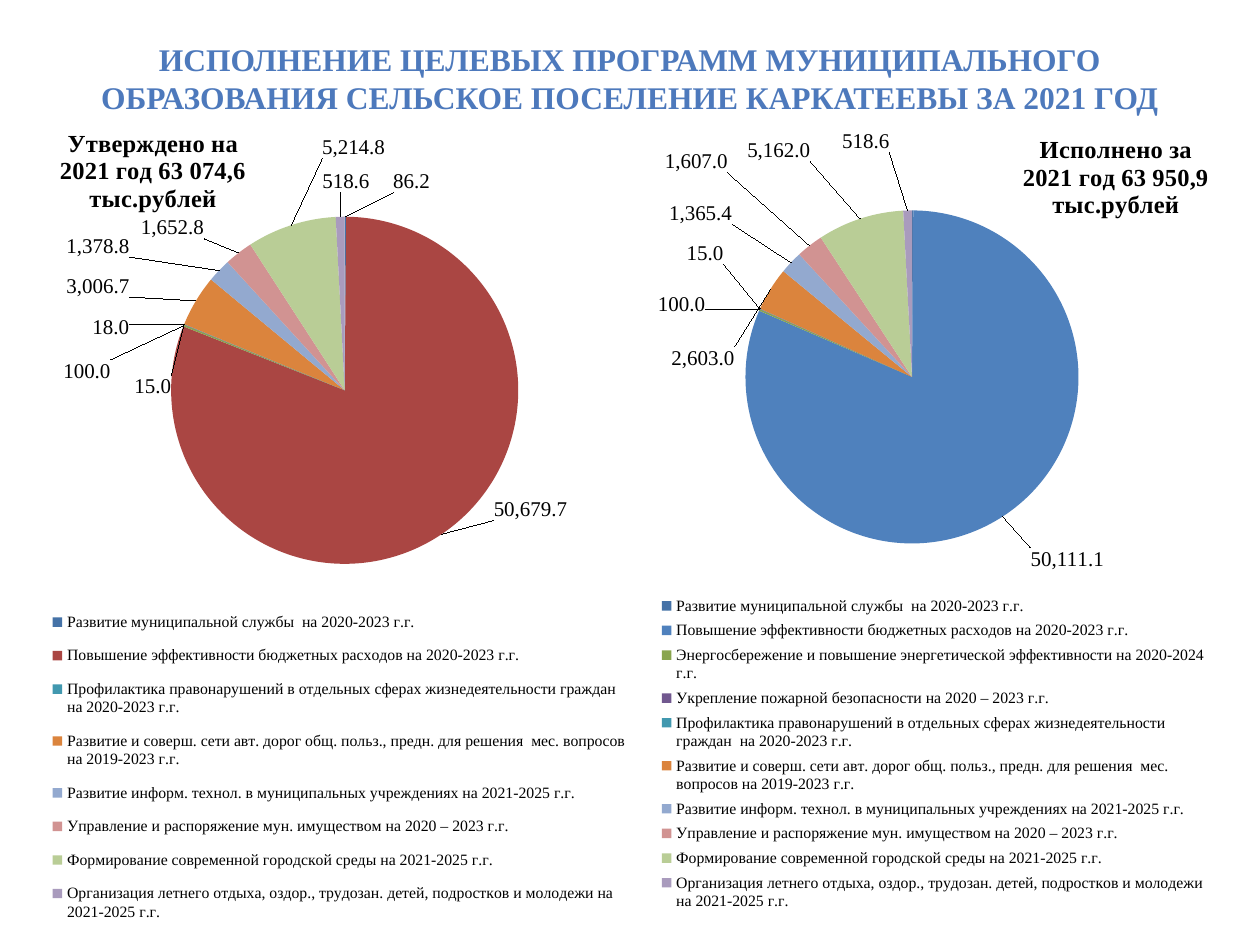
from lxml.etree import SubElement
from pptx import Presentation
from pptx.chart.data import CategoryChartData
from pptx.dml.color import RGBColor
from pptx.enum.chart import XL_CHART_TYPE, XL_LABEL_POSITION, XL_LEGEND_POSITION
from pptx.enum.text import MSO_ANCHOR, MSO_AUTO_SIZE, PP_ALIGN
from pptx.oxml import parse_xml
from pptx.oxml.ns import nsdecls, qn
from pptx.util import Cm, Pt

FONT = "Times New Roman"
FORMAT = "#,##0.0"
BLUE = RGBColor(0x4D, 0x79, 0xBC)
BLACK = RGBColor(0, 0, 0)
SKY = RGBColor(0x4F, 0x81, 0xBD)
RED = RGBColor(0xAA, 0x46, 0x43)
SHADES = [
    RGBColor(0x45, 0x72, 0xA7), RED,
    RGBColor(0x89, 0xA5, 0x4E), RGBColor(0x71, 0x58, 0x8F),
    RGBColor(0x41, 0x98, 0xAF), RGBColor(0xDB, 0x84, 0x3D),
    RGBColor(0x93, 0xA9, 0xCF), RGBColor(0xD1, 0x93, 0x92),
    RGBColor(0xB9, 0xCD, 0x96), RGBColor(0xA9, 0x9B, 0xBD),
]
NAMES = [
    "Развитие муниципальной службы  на 2020-2023 г.г.",
    "Повышение эффективности бюджетных расходов на 2020-2023 г.г.",
    "Энергосбережение и повышение энергетической эффективности на 2020-2024 г.г.",
    "Укрепление пожарной безопасности на 2020 – 2023 г.г.",
    "Профилактика правонарушений в отдельных сферах жизнедеятельности граждан  на 2020-2023 г.г.",
    "Развитие и соверш. сети авт. дорог общ. польз., предн. для решения  мес. вопросов на 2019-2023 г.г.",
    "Развитие информ. технол. в муниципальных учреждениях на 2021-2025 г.г.",
    "Управление и распоряжение мун. имуществом на 2020 – 2023 г.г.",
    "Формирование современной городской среды на 2021-2025 г.г.",
    "Организация летнего отдыха, оздор., трудозан. детей, подростков и молодежи на 2021-2025 г.г.",
]
# Boxes inside a chart are shares of its size; shifts move labels off the rim.
PIES = [
    {
        "title": "Утверждено на\n2021 год 63 074,6\nтыс.рублей",
        "frame": (0.89, 1.98, 12.12, 17.07),
        "vals": [86.2, 50679.7, 100, 18, 15, 3006.7, 1378.8, 1652.8, 5214.8, 518.6],
        "big": RED,
        "head": (0.02, 0.03),
        "plot": (0.2, 0.14, 0.6, 0.41),
        "key": (0.01, 0.59, 0.96, 0.4),
        "hide": [2, 3],
        "shifts": [(0.11, -0.02), (0.08, -0.05), (-0.11, 0.07), (-0.08, 0.02),
                   (-0.01, 0.09), (-0.1, 0), (-0.14, -0.01), (-0.05, -0.01),
                   (0.16, -0.07), (0.01, -0.02)],
    },
    {
        "title": "Исполнено за\n2021 год 63 950,9\nтыс.рублей",
        "frame": (12.75, 1.78, 11.99, 16.87),
        "vals": [78.8, 50111.1, 100, 18, 15, 2603, 1365.4, 1607, 5162, 518.6],
        "big": SKY,
        "head": (0.65, 0.05),
        "plot": (0.19, 0.14, 0.56, 0.41),
        "key": (0.04, 0.6, 0.93, 0.39),
        "hide": [],
        "shifts": [None, (0.04, 0.03), (-0.08, 0.01), None,
                   (-0.05, -0.05), (-0.05, 0.1), (-0.09, -0.04), (-0.13, -0.08),
                   (-0.08, -0.06), (-0.07, -0.06)],
    },
]


def place(node, spot, box, mode="edge"):
    """Give a chart part a manual layout as child number spot."""
    for old in node.findall(qn("c:layout")):
        node.remove(old)
    lay = parse_xml(f"<c:layout {nsdecls('c')}><c:manualLayout/></c:layout>")
    if node.tag == qn("c:plotArea"):
        SubElement(lay[0], qn("c:layoutTarget")).set("val", "inner")
    if mode:
        for tag in ("xMode", "yMode"):
            SubElement(lay[0], qn("c:" + tag)).set("val", mode)
    for tag, val in zip("xywh", box):
        SubElement(lay[0], qn("c:" + tag)).set("val", str(val))
    node.insert(spot, lay)


deck = Presentation()
deck.slide_width, deck.slide_height = Cm(25.4), Cm(19.05)
slide = deck.slides.add_slide(deck.slide_layouts[5])

title = slide.shapes.title
title.left, title.top, title.width, title.height = Cm(1.27), Cm(0.76), Cm(22.86), Cm(2.16)
frame = title.text_frame
frame.text = ("ИСПОЛНЕНИЕ ЦЕЛЕВЫХ ПРОГРАММ МУНИЦИПАЛЬНОГО ОБРАЗОВАНИЯ "
              "СЕЛЬСКОЕ ПОСЕЛЕНИЕ КАРКАТЕЕВЫ ЗА 2021 ГОД")
frame.word_wrap = True
frame.auto_size = MSO_AUTO_SIZE.NONE
frame.vertical_anchor = MSO_ANCHOR.TOP
frame.margin_top = Cm(0.05)
para = frame.paragraphs[0]
para.alignment = PP_ALIGN.CENTER
font = para.runs[0].font
font.name, font.size, font.bold = FONT, Pt(18), True
font.color.rgb = BLUE

for pie in PIES:
    data = CategoryChartData(number_format=FORMAT)
    data.categories = NAMES
    data.add_series("Series 1", pie["vals"])
    spots = [Cm(val) for val in pie["frame"]]
    chart = slide.shapes.add_chart(XL_CHART_TYPE.PIE, *spots, data).chart
    chart.font.name, chart.font.size = FONT, Pt(18)
    chart.font.color.rgb = BLACK
    root = chart.element.find(qn("c:chart"))
    root.addnext(parse_xml(
        f"<c:spPr {nsdecls('c', 'a')}><a:noFill/><a:ln><a:noFill/></a:ln></c:spPr>"))
    place(root.find(qn("c:plotArea")), 0, pie["plot"])

    head = chart.chart_title
    head.text_frame.text = pie["title"]
    for para in head.text_frame.paragraphs:
        para.alignment = PP_ALIGN.CENTER
        font = para.runs[0].font
        font.name, font.size, font.bold = FONT, Pt(14), True
        font.color.rgb = BLACK
    head.include_in_layout = True
    place(root.find(qn("c:title")), 1, pie["head"])

    chart.has_legend = True
    chart.legend.position = XL_LEGEND_POSITION.BOTTOM
    chart.legend.include_in_layout = False
    chart.legend.font.size = Pt(9)
    chart.legend.font.name = FONT
    key = root.find(qn("c:legend"))
    for spot, idx in enumerate(pie["hide"], 1):
        key.insert(spot, parse_xml(
            f'<c:legendEntry {nsdecls("c")}><c:idx val="{idx}"/>'
            '<c:delete val="1"/></c:legendEntry>'))
    place(key, 1 + len(pie["hide"]), pie["key"])

    plot = chart.plots[0]
    plot.vary_by_categories = True
    series = plot.series[0]
    labels = series.data_labels
    labels.show_value = True
    labels.number_format, labels.number_format_is_linked = FORMAT, False
    labels.position = XL_LABEL_POSITION.OUTSIDE_END
    labels.font.size, labels.font.name = Pt(12), FONT
    shades = SHADES[:1] + [pie["big"]] + SHADES[2:]
    for idx, (shade, shift) in enumerate(zip(shades, pie["shifts"])):
        point = series.points[idx]
        point.format.fill.solid()
        point.format.fill.fore_color.rgb = shade
        label = point.data_label
        label.position = XL_LABEL_POSITION.OUTSIDE_END
        label.font.size, label.font.name = Pt(12), FONT
        node = root.xpath(f".//c:dLbl[c:idx/@val='{idx}']")[0]
        if shift:
            place(node, 1, shift, None)
            node.insert(2, parse_xml(
                f'<c:numFmt {nsdecls("c")} formatCode="{FORMAT}" sourceLinked="0"/>'))
        else:
            for part in node[1:]:
                node.remove(part)
            SubElement(node, qn("c:delete")).set("val", "1")

deck.save("out.pptx")
